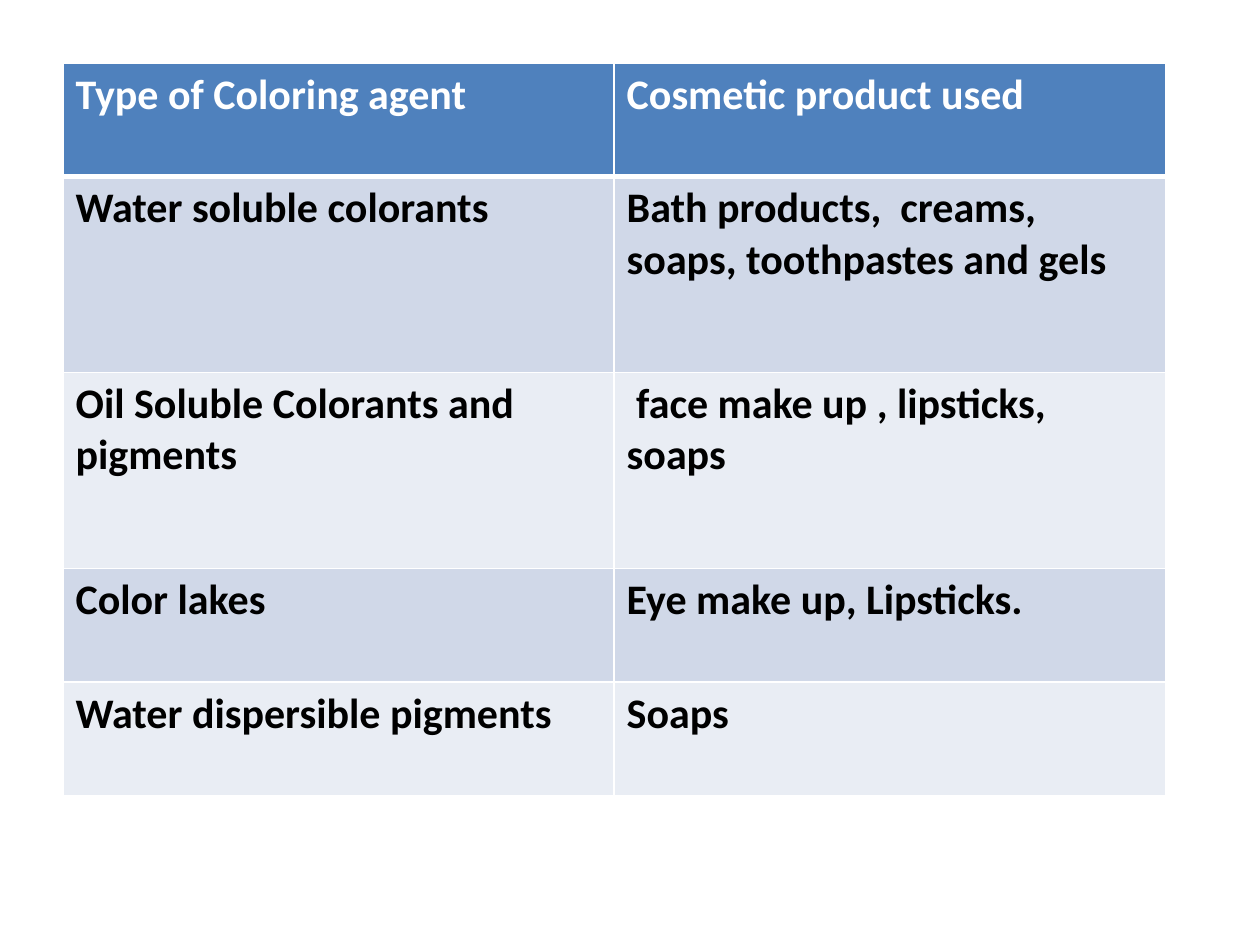
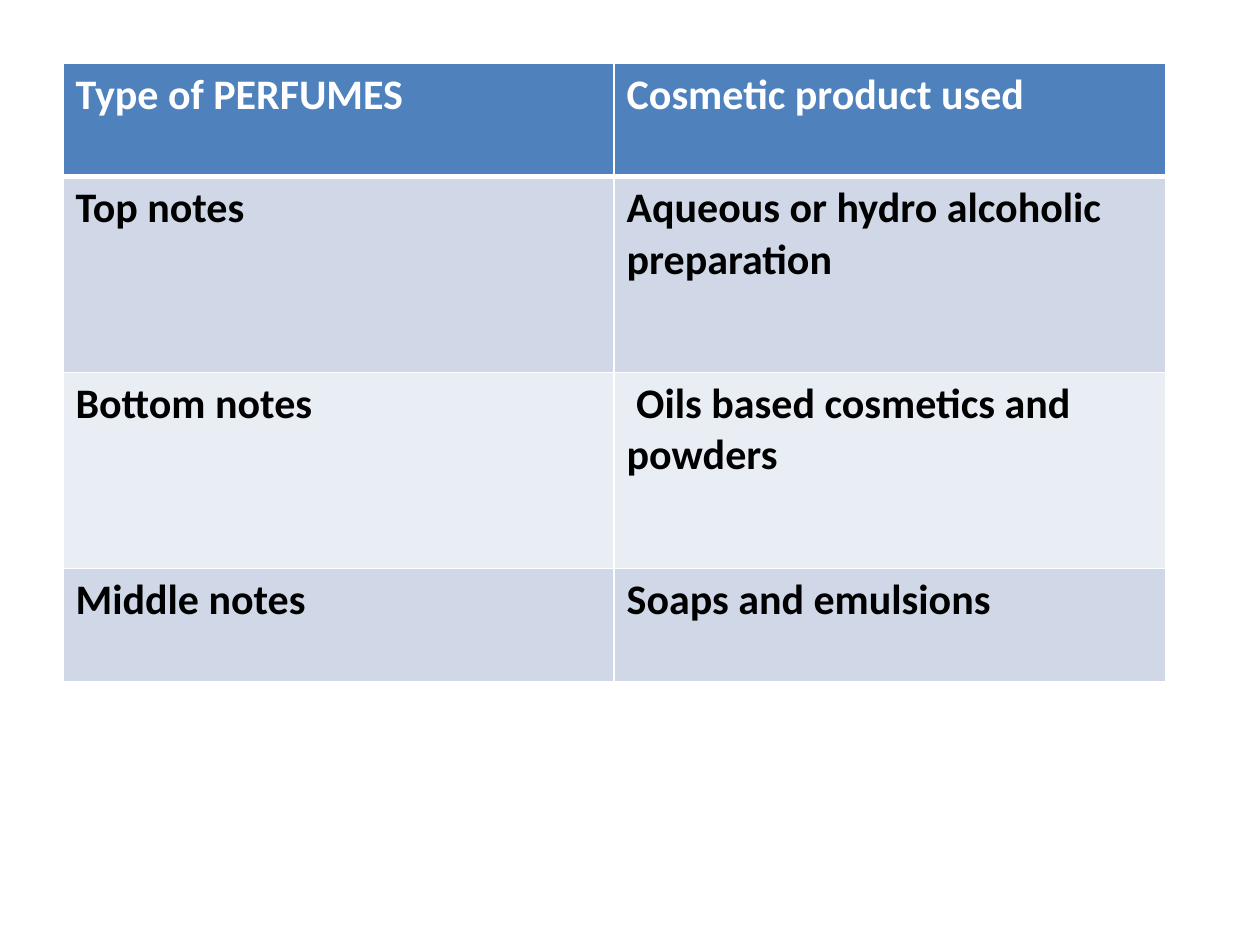
import pptx
import pptx.dml.color
import pptx.util
from lxml import etree
from pptx.oxml.ns import qn

Cm = pptx.util.Cm
Pt = pptx.util.Pt
RGBColor = pptx.dml.color.RGBColor

COLORING_AGENTS = [
    ("Type of Coloring agent", "Cosmetic product used"),
    ("Water soluble colorants", "Bath products,  creams, soaps, toothpastes and gels"),
    ("Oil Soluble Colorants and pigments", " face make up , lipsticks, soaps"),
    ("Color lakes", "Eye make up, Lipsticks."),
    ("Water dispersible pigments", "Soaps"),
]
PERFUMES = [
    ("Type of PERFUMES", "Cosmetic product used"),
    ("Top notes", "Aqueous or hydro alcoholic preparation"),
    ("Bottom notes", " Oils based cosmetics and powders"),
    ("Middle notes", "Soaps and emulsions"),
]

WHITE = RGBColor(0xFF, 0xFF, 0xFF)
BLACK = RGBColor(0x00, 0x00, 0x00)
HEADER_BLUE = RGBColor(0x4F, 0x81, 0xBD)
BANDS = [RGBColor(0xD0, 0xD8, 0xE8), RGBColor(0xE9, 0xED, 0xF4)]

FONT_NAME = "Calibri"
FONT_SIZE = Pt(24)
TABLE_LEFT = TABLE_TOP = Cm(1.27)
COLUMN_WIDTH = Cm(11.11)
SHORT_ROW = Cm(2.29)
TALL_ROW = Cm(3.95)
TALL_ROWS = (1, 2)
THIN, THICK = Pt(1), Pt(3)


def set_borders(cell, top, bottom):
    properties = cell._tc.get_or_add_tcPr()
    widths = {"a:lnL": THIN, "a:lnR": THIN, "a:lnT": top, "a:lnB": bottom}
    for tag, width in widths.items():
        line = etree.SubElement(properties, qn(tag), w=str(width))
        fill = etree.SubElement(line, qn("a:solidFill"))
        etree.SubElement(fill, qn("a:srgbClr"), val=str(WHITE))


def fill_cell(cell, text, row_index):
    is_header = row_index == 0
    set_borders(cell,
                top=THICK if row_index == 1 else THIN,
                bottom=THICK if is_header else THIN)
    cell.fill.solid()
    cell.fill.fore_color.rgb = HEADER_BLUE if is_header else BANDS[(row_index - 1) % 2]
    cell.text = text
    font = cell.text_frame.paragraphs[0].font
    font.name = FONT_NAME
    font.size = FONT_SIZE
    font.bold = True
    font.color.rgb = WHITE if is_header else BLACK


def add_table_slide(presentation, rows):
    slide = presentation.slides.add_slide(presentation.slide_layouts[6])
    heights = [TALL_ROW if index in TALL_ROWS else SHORT_ROW for index in range(len(rows))]
    column_count = len(rows[0])
    table = slide.shapes.add_table(len(rows), column_count, TABLE_LEFT, TABLE_TOP,
                                   COLUMN_WIDTH * column_count, sum(heights)).table
    for column in table.columns:
        column.width = COLUMN_WIDTH
    for row_index, (texts, height) in enumerate(zip(rows, heights)):
        table.rows[row_index].height = height
        for column_index, text in enumerate(texts):
            fill_cell(table.cell(row_index, column_index), text, row_index)


def main():
    presentation = pptx.Presentation()
    presentation.slide_width = Cm(25.4)
    presentation.slide_height = Cm(19.05)
    for rows in (COLORING_AGENTS, PERFUMES):
        add_table_slide(presentation, rows)
    presentation.save("out.pptx")


if __name__ == "__main__":
    main()
